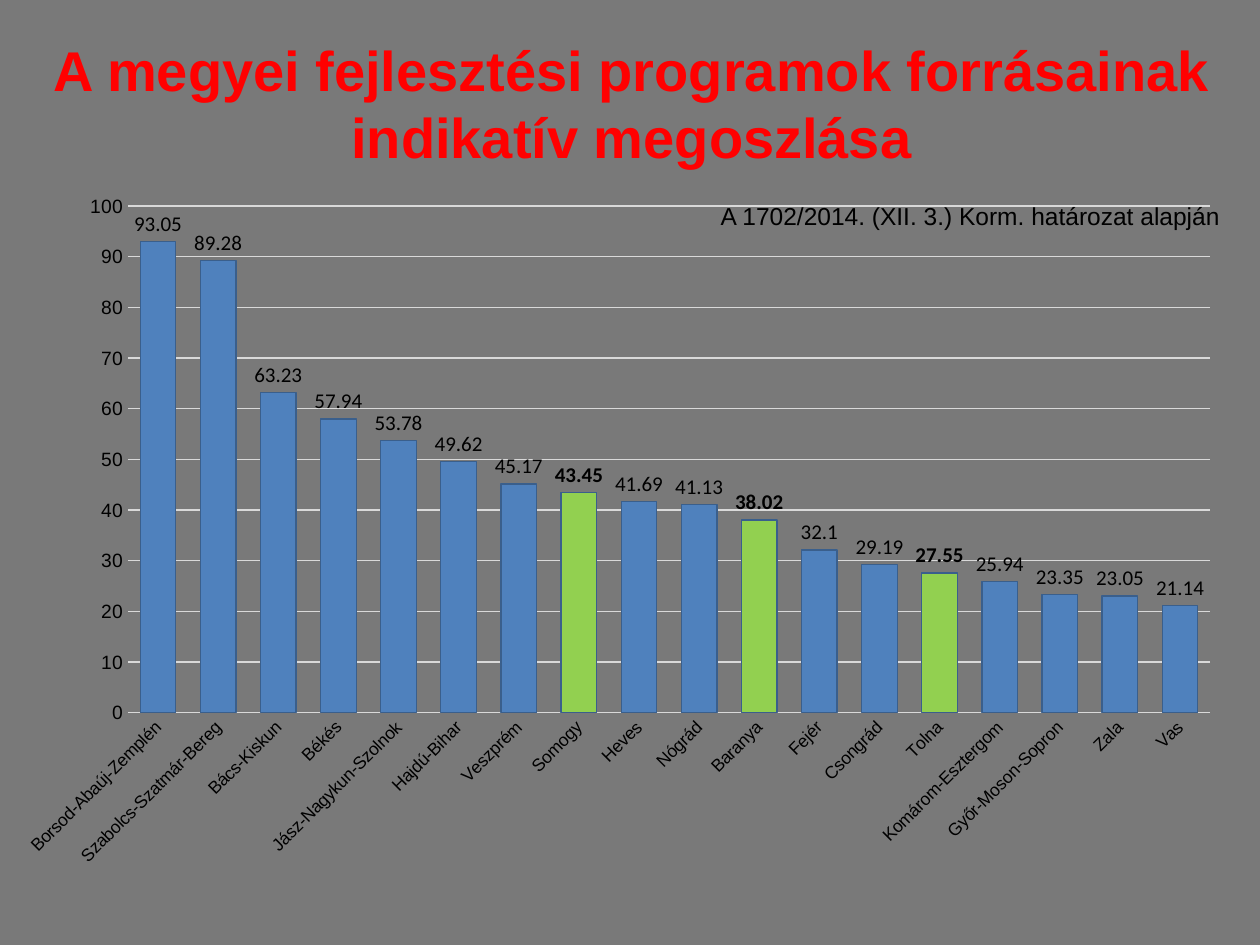
from lxml.etree import SubElement
from pptx import Presentation
from pptx.chart.data import CategoryChartData
from pptx.dml.color import RGBColor as RGB
from pptx.enum.chart import XL_CHART_TYPE as Kind, XL_LABEL_POSITION as Pos, XL_TICK_MARK as Tick
from pptx.enum.text import MSO_ANCHOR as Anchor, PP_ALIGN as Align
from pptx.oxml.ns import qn
from pptx.util import Inches, Pt

TITLE = "A megyei fejlesztési programok forrásainak indikatív megoszlása"
NOTE = "A 1702/2014. (XII. 3.) Korm. határozat alapján"
FUNDS = {
    "Borsod-Abaúj-Zemplén": 93.05,
    "Szabolcs-Szatmár-Bereg": 89.28,
    "Bács-Kiskun": 63.23,
    "Békés": 57.94,
    "Jász-Nagykun-Szolnok": 53.78,
    "Hajdú-Bihar": 49.62,
    "Veszprém": 45.17,
    "Somogy": 43.45,
    "Heves": 41.69,
    "Nógrád": 41.13,
    "Baranya": 38.02,
    "Fejér": 32.1,
    "Csongrád": 29.19,
    "Tolna": 27.55,
    "Komárom-Esztergom": 25.94,
    "Győr-Moson-Sopron": 23.35,
    "Zala": 23.05,
    "Vas": 21.14,
}
REGION = ("Somogy", "Baranya", "Tolna")
COLORS = {"back": "797979", "title": "FF0000", "text": "000000", "bar": "4F81BD",
          "edge": "3A5F8C", "region": "92D050", "grid": "D9D9D9"}
PLOT = {"x": 0.1, "y": 0.03, "w": 0.88, "h": 0.73}


def color(name):
    return RGB.from_string(COLORS[name])


def style(font, size, name="Arial", tint="text", bold=False):
    font.size, font.name, font.bold = Pt(size), name, bold
    font.color.rgb = color(tint)


def paint(form, tint):
    form.fill.solid()
    form.fill.fore_color.rgb = color(tint)
    stroke(form.line, "edge")


def stroke(line, tint):
    line.color.rgb = color(tint)
    line.width = Pt(0.75)


def add_text(slide, box, text, size, tint="text", bold=False, wrap=False):
    frame = slide.shapes.add_textbox(*map(Inches, box)).text_frame
    frame.word_wrap = wrap
    para = frame.paragraphs[0]
    para.text = text
    style(para.font, size, tint=tint, bold=bold)
    return frame


def set_axes(chart):
    cat, val = chart.category_axis, chart.value_axis
    for axis, size in ((cat, 10), (val, 11)):
        axis.major_tick_mark = axis.minor_tick_mark = Tick.NONE
        style(axis.tick_labels.font, size)
    stroke(cat.format.line, "grid")
    cat._element.find(qn("c:txPr")).find(qn("a:bodyPr")).set("rot", "-2700000")
    val.minimum_scale, val.maximum_scale, val.major_unit = 0, 100, 10
    val.format.line.fill.background()
    stroke(val.major_gridlines.format.line, "grid")


def set_bars(plot):
    plot.gap_width, plot.overlap = 69, -27
    plot.vary_by_categories = False
    bars = plot.series[0]
    paint(bars.format, "bar")
    for i, county in enumerate(FUNDS):
        if county in REGION:
            point = bars.points[i]
            paint(point.format, "region")
            style(point.data_label.font, 12, "Calibri", bold=True)
            point.data_label.position = Pos.OUTSIDE_END
    labels = bars.data_labels
    labels.show_value = True
    labels.position = Pos.OUTSIDE_END
    style(labels.font, 12, "Calibri")


def place_plot(chart):
    area = chart._chartSpace.chart.plotArea
    layout = area.find(qn("c:layout"))
    if layout is None:
        layout = SubElement(area, qn("c:layout"))
        area.insert(0, layout)
    manual = SubElement(layout, qn("c:manualLayout"))
    rules = {"layoutTarget": "inner", "xMode": "edge", "yMode": "edge", **PLOT}
    for tag, value in rules.items():
        SubElement(manual, qn(f"c:{tag}")).set("val", str(value))


def add_bars(slide):
    data = CategoryChartData()
    data.categories = list(FUNDS)
    data.add_series("Series 1", list(FUNDS.values()))
    box = map(Inches, (0.04, 1.47, 9.76, 5.51))
    chart = slide.shapes.add_chart(Kind.COLUMN_CLUSTERED, *box, data).chart
    chart.has_legend = chart.has_title = False
    style(chart.font, 10, "Calibri")
    set_axes(chart)
    set_bars(chart.plots[0])
    place_plot(chart)


def main():
    deck = Presentation()
    deck.slide_width, deck.slide_height = Inches(10), Inches(7.5)
    slide = deck.slides.add_slide(deck.slide_layouts[6])
    back = slide.background.fill
    back.solid()
    back.fore_color.rgb = color("back")
    add_bars(slide)
    title = add_text(slide, (0.23, 0.17, 9.57, 1.29), TITLE, 32, "title", True, True)
    title.vertical_anchor = Anchor.MIDDLE
    title.paragraphs[0].alignment = Align.CENTER
    add_text(slide, (5.62, 1.55, 4.18, 0.34), NOTE, 14)
    deck.save("out.pptx")


if __name__ == "__main__":
    main()
